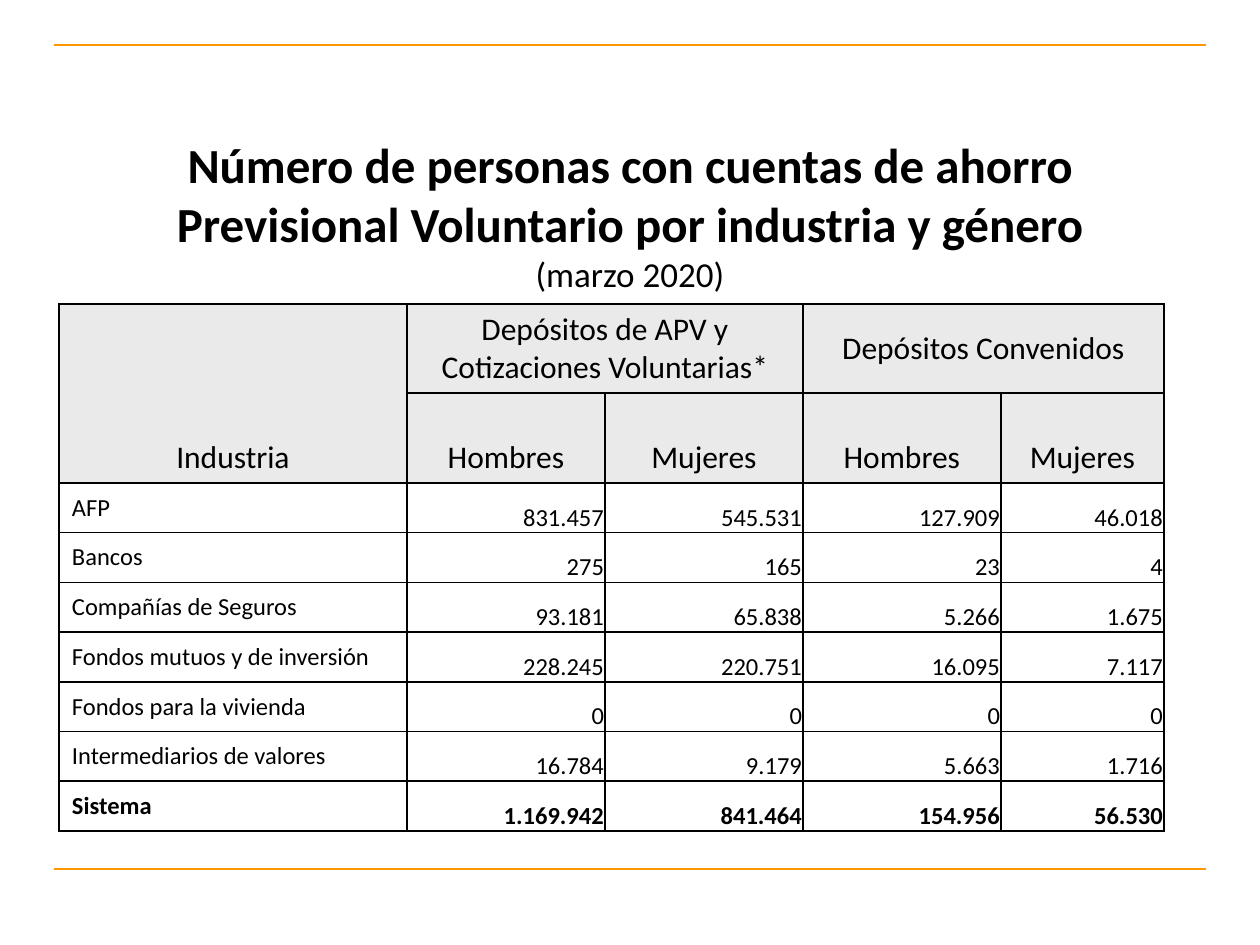
from lxml.etree import SubElement
from pptx import Presentation
from pptx.dml.color import RGBColor
from pptx.enum.shapes import MSO_CONNECTOR
from pptx.enum.text import MSO_ANCHOR, MSO_AUTO_SIZE, PP_ALIGN
from pptx.oxml.ns import qn
from pptx.util import Emu, Pt

COLORS = {"text": "000000", "rule": "FF9900", "header": "EAEAEA", "label": "FFFFFF"}
COLUMN_WIDTHS = [348, 198, 198, 198, 163]
HEADER_HEIGHTS = [89, 90]
BODY_HEIGHT = 348
HEADERS = [
    ["Industria", "Depósitos de APV y Cotizaciones Voluntarias*", "", "Depósitos Convenidos", ""],
    ["", "Hombres", "Mujeres", "Hombres", "Mujeres"],
]
INDUSTRIES = [
    ["AFP", "831.457", "545.531", "127.909", "46.018"],
    ["Bancos", "275", "165", "23", "4"],
    ["Compañías de Seguros", "93.181", "65.838", "5.266", "1.675"],
    ["Fondos mutuos y de inversión", "228.245", "220.751", "16.095", "7.117"],
    ["Fondos para la vivienda", "0", "0", "0", "0"],
    ["Intermediarios de valores", "16.784", "9.179", "5.663", "1.716"],
    ["Sistema", "1.169.942", "841.464", "154.956", "56.530"],
]
MERGES = [((0, 0), (1, 0)), ((0, 1), (0, 2)), ((0, 3), (0, 4))]


def px(length):
    return Emu(round(length * 914400 / 126))


def color(name):
    return RGBColor.from_string(COLORS[name])


def add_text(paragraph, text, size=14, bold=False, align=PP_ALIGN.CENTER):
    paragraph.alignment = align
    run = paragraph.add_run()
    run.text = text
    run.font.name = "Calibri"
    run.font.size = Pt(size)
    run.font.bold = bold
    run.font.color.rgb = color("text")


def add_rule(slide, y):
    rule = slide.shapes.add_connector(MSO_CONNECTOR.STRAIGHT, px(54), px(y), px(1206), px(y))
    rule.line.color.rgb = color("rule")
    rule.line.width = Pt(0.75)
    SubElement(rule._element.spPr, qn("a:effectLst"))


def add_title(slide):
    title = slide.shapes.title
    title.left, title.top, title.width, title.height = px(63), px(145), px(1134), px(139)
    frame = title.text_frame
    frame.word_wrap = True
    frame.auto_size = MSO_AUTO_SIZE.NONE
    frame.vertical_anchor = MSO_ANCHOR.MIDDLE
    heading = frame.paragraphs[0]
    add_text(
        heading,
        "Número de personas con cuentas de ahorro Previsional Voluntario por industria y género",
        size=28,
        bold=True,
    )
    heading.add_line_break()
    add_text(heading, "(marzo 2020)", size=20)


def set_borders(cell):
    properties = cell._tc.get_or_add_tcPr()
    for side in ("lnL", "lnR", "lnT", "lnB"):
        border = SubElement(properties, qn(f"a:{side}"), w=str(Pt(1)))
        SubElement(SubElement(border, qn("a:solidFill")), qn("a:srgbClr"), val=COLORS["text"])


def format_cell(cell, anchor, fill=None, margins=(13, 6, 13, 6)):
    set_borders(cell)
    cell.vertical_anchor = anchor
    cell.margin_left, cell.margin_top, cell.margin_right, cell.margin_bottom = map(px, margins)
    if fill:
        cell.fill.solid()
        cell.fill.fore_color.rgb = color(fill)
    else:
        cell.fill.background()


def fill_headers(table):
    for row, headers in enumerate(HEADERS):
        for column, header in enumerate(headers):
            cell = table.cell(row, column)
            is_group = row == 0 and column > 0
            format_cell(cell, MSO_ANCHOR.MIDDLE if is_group else MSO_ANCHOR.BOTTOM, "header")
            if header:
                add_text(cell.text_frame.paragraphs[0], header, size=18)
    for first, last in MERGES:
        table.cell(*first).merge(table.cell(*last))


def fill_industries(table):
    for row, (industry, *counts) in enumerate(INDUSTRIES, len(HEADERS)):
        bold = industry == "Sistema"
        label = table.cell(row, 0)
        format_cell(label, MSO_ANCHOR.MIDDLE, "label")
        add_text(label.text_frame.paragraphs[0], industry, bold=bold, align=PP_ALIGN.LEFT)
        for column, count in enumerate(counts, 1):
            cell = table.cell(row, column)
            format_cell(cell, MSO_ANCHOR.BOTTOM, margins=(1, 1, 1, 0))
            add_text(cell.text_frame.paragraphs[0], count, bold=bold, align=PP_ALIGN.RIGHT)


def add_savings_table(slide):
    heights = HEADER_HEIGHTS + [BODY_HEIGHT / len(INDUSTRIES)] * len(INDUSTRIES)
    table = slide.shapes.add_table(
        len(heights), len(COLUMN_WIDTHS),
        px(59), px(304), px(sum(COLUMN_WIDTHS)), px(sum(heights)),
    ).table
    table.first_row = False
    table.horz_banding = False
    for column, width in zip(table.columns, COLUMN_WIDTHS):
        column.width = px(width)
    for row, height in zip(table.rows, heights):
        row.height = px(height)
    fill_headers(table)
    fill_industries(table)


def main():
    presentation = Presentation()
    presentation.slide_width, presentation.slide_height = px(1260), px(945)
    slide = presentation.slides.add_slide(presentation.slide_layouts[5])
    for y in (45, 869):
        add_rule(slide, y)
    add_title(slide)
    add_savings_table(slide)
    presentation.save("out.pptx")


if __name__ == "__main__":
    main()
